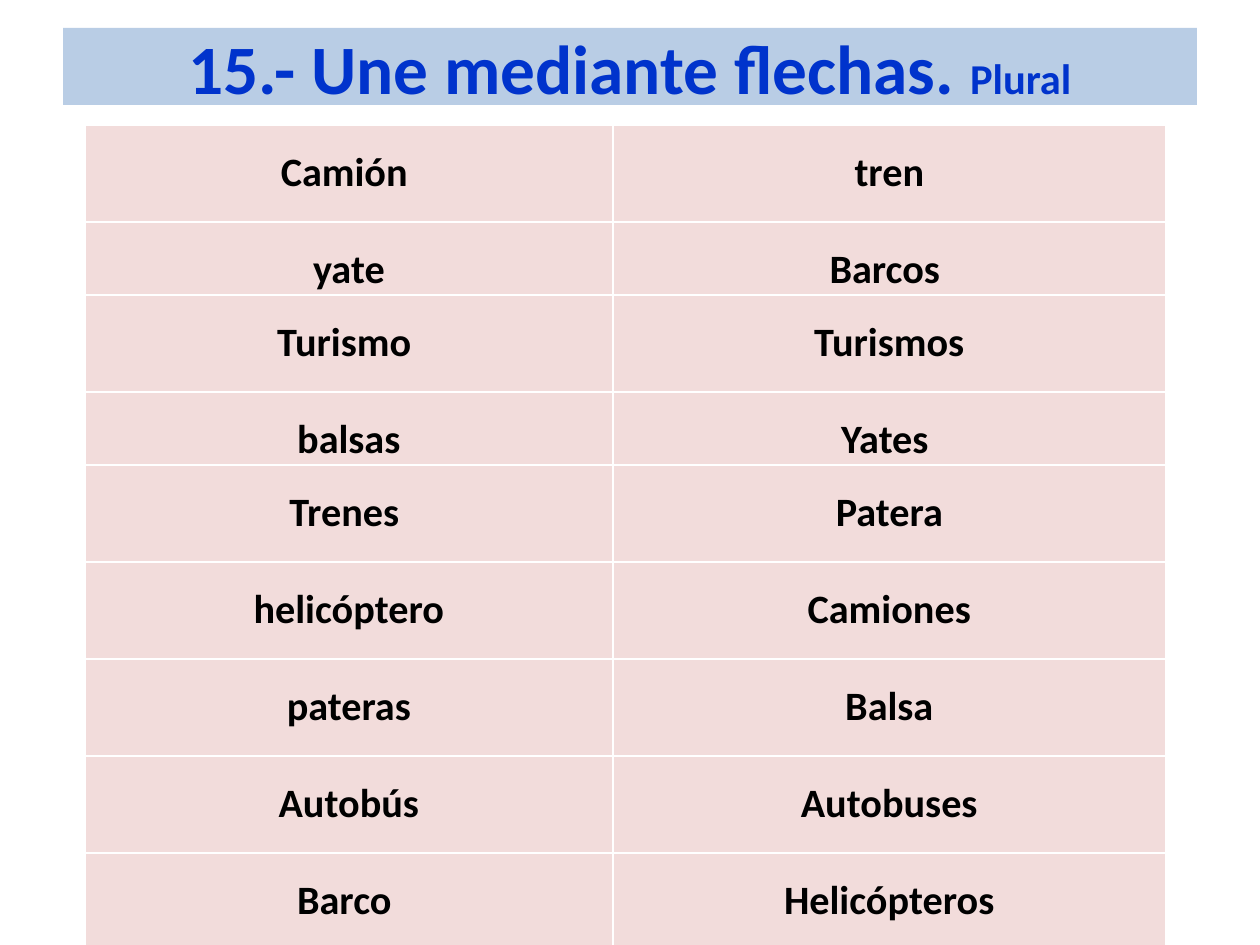
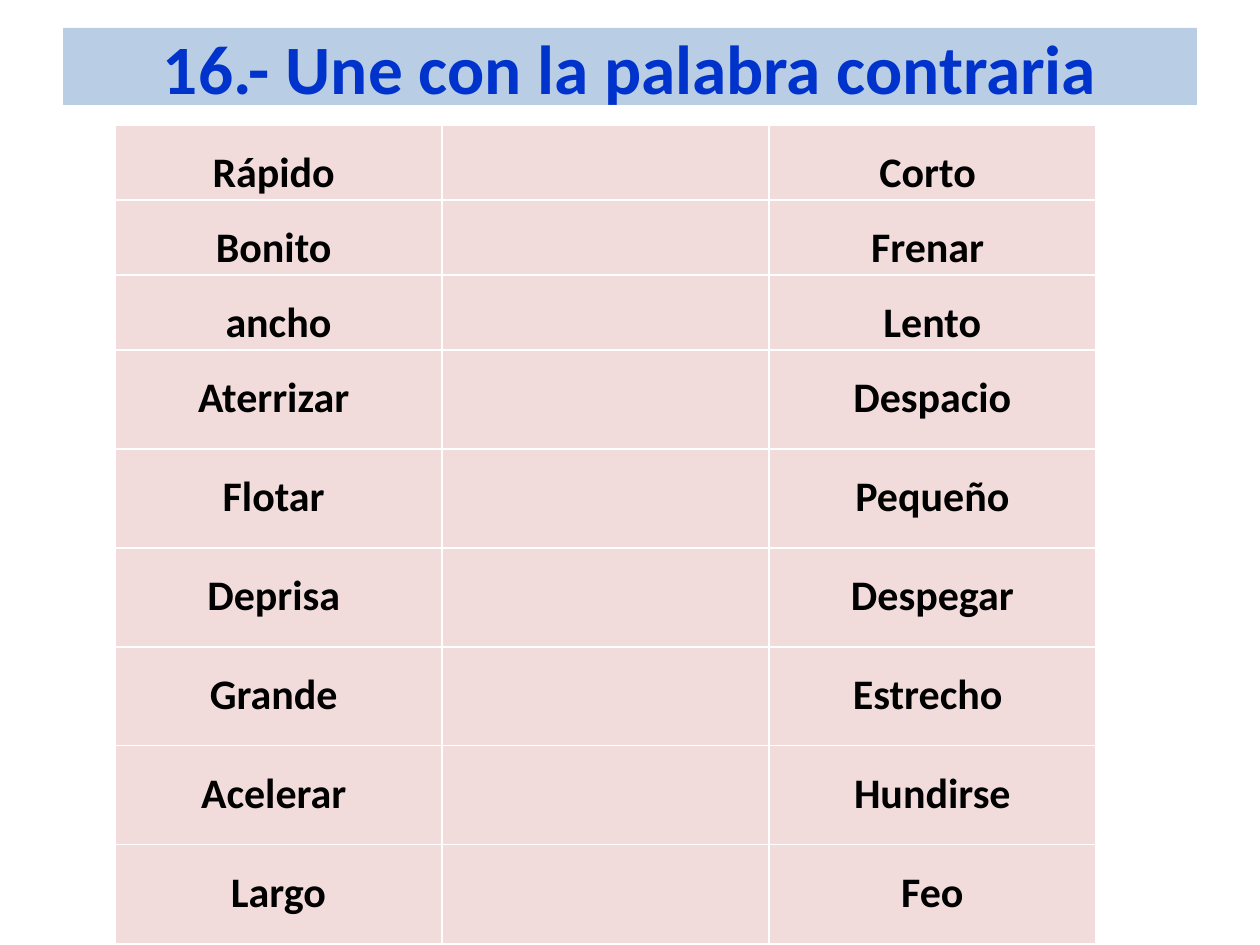
from pptx import Presentation
from pptx import util as u
from pptx.dml.color import RGBColor
from pptx.enum import text

# Shared look
PX = 914400 // 126
FONT = "Calibri"
BLUE, BAND, PINK, BLACK = "0033CC", "B9CDE5", "F2DCDB", "000000"
TITLE_SIZE, NOTE_SIZE = 39.6, 24.3
SIDE_MARGIN, TOP_MARGIN = 4, 23

PLURALS = [
    ("Camión ", "tren"),
    ("yate", "Barcos "),
    ("Turismo ", "Turismos"),
    ("balsas", "Yates "),
    ("Trenes ", "Patera"),
    ("helicóptero", "Camiones"),
    ("pateras", "Balsa"),
    ("Autobús", "Autobuses"),
    ("Barco ", "Helicópteros"),
]
OPPOSITES = [
    ("Rápido ", "", "Corto "),
    ("Bonito ", "", "Frenar "),
    ("ancho", "", "Lento"),
    ("Aterrizar ", "", "Despacio"),
    ("Flotar ", "", "Pequeño"),
    ("Deprisa ", "", "Despegar"),
    ("Grande ", "", "Estrecho "),
    ("Acelerar ", "", "Hundirse"),
    ("Largo", "", "Feo"),
]


def px(n):
    return u.Emu(n * PX)


def rgb(color):
    return RGBColor.from_string(color)


def style_run(r, size, color):
    r.font.name = FONT
    r.font.size = u.Pt(size)
    r.font.bold = True
    r.font.color.rgb = rgb(color)


def add_title(s, heading, note=""):
    """Blue heading on a pale band, with an optional smaller note."""
    sp = s.shapes.title
    sp.left, sp.top, sp.width, sp.height = px(63), px(28), px(1134), px(77)
    sp.fill.solid()
    sp.fill.fore_color.rgb = rgb(BAND)
    tf = sp.text_frame
    tf.auto_size = text.MSO_AUTO_SIZE.NONE
    tf.vertical_anchor = text.MSO_ANCHOR.MIDDLE
    p = tf.paragraphs[0]
    p.text = heading
    p.alignment = text.PP_ALIGN.CENTER
    style_run(p.runs[0], TITLE_SIZE, BLUE)
    if note:
        r = p.add_run()
        r.text = note
        style_run(r, NOTE_SIZE, BLUE)


def fill_cell(cell, word, size):
    cell.fill.solid()
    cell.fill.fore_color.rgb = rgb(PINK)
    cell.margin_left = cell.margin_right = px(SIDE_MARGIN)
    cell.margin_top, cell.margin_bottom = px(TOP_MARGIN), 0
    p = cell.text_frame.paragraphs[0]
    p.text = word
    p.alignment = text.PP_ALIGN.CENTER
    for r in p.runs:
        style_run(r, size, BLACK)


def add_word_table(s, words, left, top, widths, heights, size):
    """Columns of words to be joined by the pupil."""
    frame = s.shapes.add_table(len(words), len(widths), px(left), px(top),
                               px(sum(widths)), px(sum(heights)))
    table = frame.table
    for column, width in zip(table.columns, widths):
        column.width = px(width)
    for row, height, entries in zip(table.rows, heights, words):
        row.height = px(height)
        for cell, word in zip(row.cells, entries):
            fill_cell(cell, word, size)


def add_exercise(prs, heading, note=""):
    s = prs.slides.add_slide(prs.slide_layouts[5])
    add_title(s, heading, note)
    return s


def main():
    prs = Presentation()
    prs.slide_width, prs.slide_height = px(1260), px(945)

    # Singular and plural; the second and fourth rows are shorter
    s = add_exercise(prs, "15.- Une mediante flechas. ", "Plural")
    heights = [73 if i in (1, 3) else 97 for i in range(len(PLURALS))]
    add_word_table(s, PLURALS, 85, 125, [528, 553], heights, 23)

    # Opposites; the first three rows are shorter
    s = add_exercise(prs, "16.- Une con la palabra contraria")
    heights = [75 if i < 3 else 99 for i in range(len(OPPOSITES))]
    add_word_table(s, OPPOSITES, 115, 125, [327] * 3, heights, 24)

    prs.save("out.pptx")


if __name__ == "__main__":
    main()
